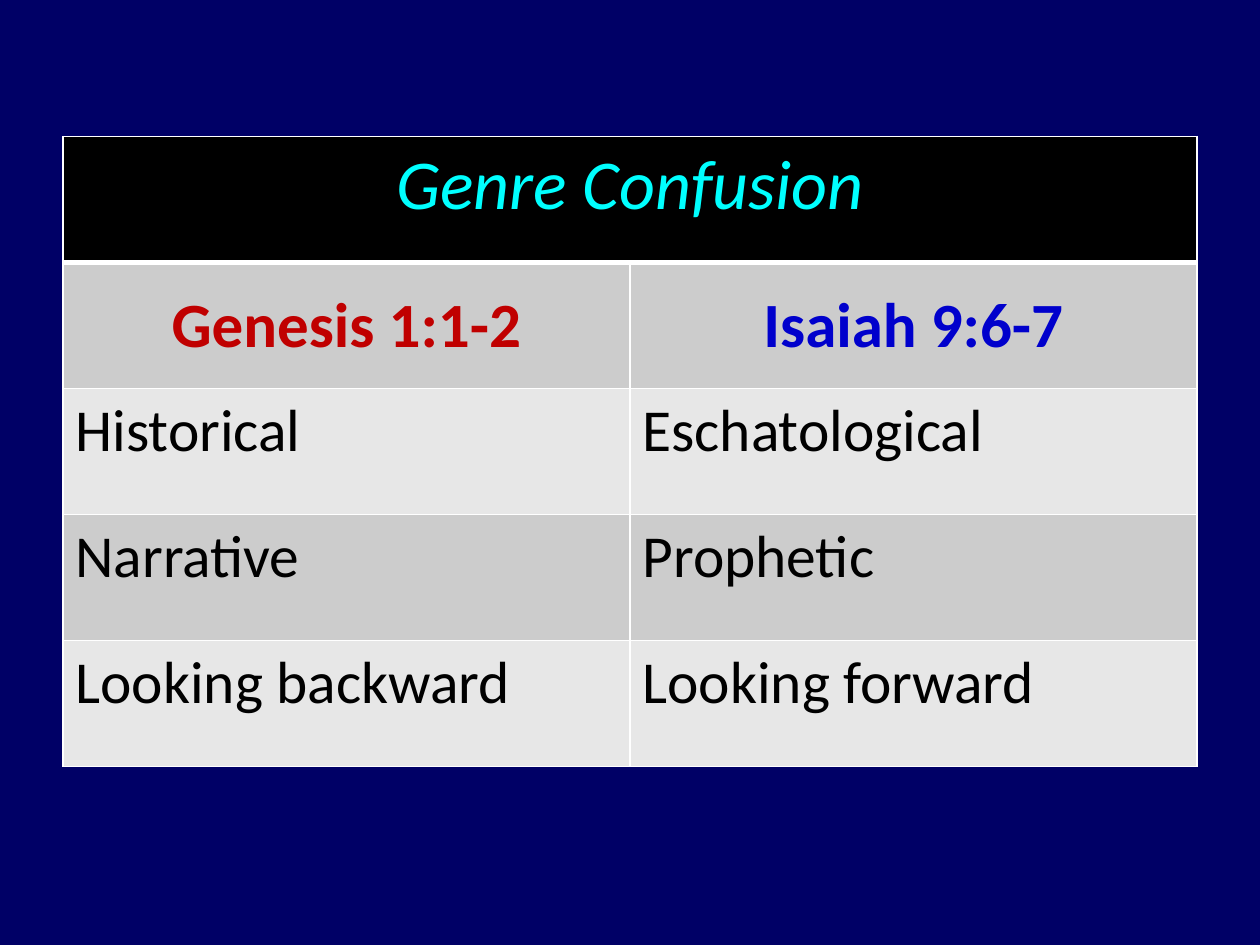
"""Build a slide with one table that compares two passages."""
from pptx import Presentation
from pptx.dml.color import RGBColor as RGB
from pptx.enum.text import MSO_ANCHOR as Anchor, PP_ALIGN as Align
from pptx.oxml import parse_xml
from pptx.oxml.ns import nsdecls
from pptx.util import Pt

ROWS = [
    ("Genesis 1:1-2", "Isaiah 9:6-7"),
    ("Historical", "Eschatological"),
    ("Narrative", "Prophetic"),
    ("Looking backward", "Looking forward"),
]
HEADS = ("C00000", "0000CC")
BANDS = ("CCCCCC", "E7E7E7")


def tint(fill, code):
    fill.solid()
    fill.fore_color.rgb = RGB.from_string(code)


def write(cell, text, size=34, color="000000", bold=False, italic=False,
          align=Align.LEFT, anchor=Anchor.TOP, face="Calibri"):
    cell.vertical_anchor = anchor
    para = cell.text_frame.paragraphs[0]
    para.alignment = align
    run = para.add_run()
    run.text = text
    font = run.font
    font.name, font.size = face, Pt(size)
    font.bold, font.italic = bold, italic
    tint(font.fill, color)


class Deck:
    def __init__(self, wide, high, back, line):
        self.show = Presentation()
        self.show.slide_width, self.show.slide_height = Pt(wide), Pt(high)
        self.line = line
        self.slide = self.show.slides.add_slide(self.show.slide_layouts[6])
        tint(self.slide.background.fill, back)

    def table(self, rows, cols, left, top, width, height):
        frame = self.slide.shapes.add_table(
            rows, cols, Pt(left), Pt(top), Pt(width), Pt(height))
        return frame.table

    def paint(self, cell, fill, top=1, base=1):
        props = cell._tc.get_or_add_tcPr()
        for side, width in zip("LRTB", (1, 1, top, base)):
            props.append(parse_xml(
                f'<a:ln{side} {nsdecls("a")} w="{Pt(width)}"><a:solidFill>'
                f'<a:srgbClr val="{self.line}"/></a:solidFill></a:ln{side}>'))
        tint(cell.fill, fill)


def main():
    deck = Deck(720, 540, "000066", "FFFFFF")
    table = deck.table(len(ROWS) + 1, 2, 36, 78, 648, 360)
    title = table.cell(0, 0)
    title.merge(table.cell(0, 1))
    for col in range(2):
        deck.paint(table.cell(0, col), "000000", base=3)
    write(title, "Genre Confusion", size=40, color="00FFFF", italic=True,
          align=Align.CENTER)
    for row, texts in enumerate(ROWS):
        for col, text in enumerate(texts):
            cell = table.cell(row + 1, col)
            deck.paint(cell, BANDS[row % 2], top=1 if row else 3)
            if row:
                write(cell, text)
            else:
                write(cell, text, size=36, color=HEADS[col], bold=True,
                      align=Align.CENTER, anchor=Anchor.MIDDLE)
    deck.show.save("out.pptx")


if __name__ == "__main__":
    main()
